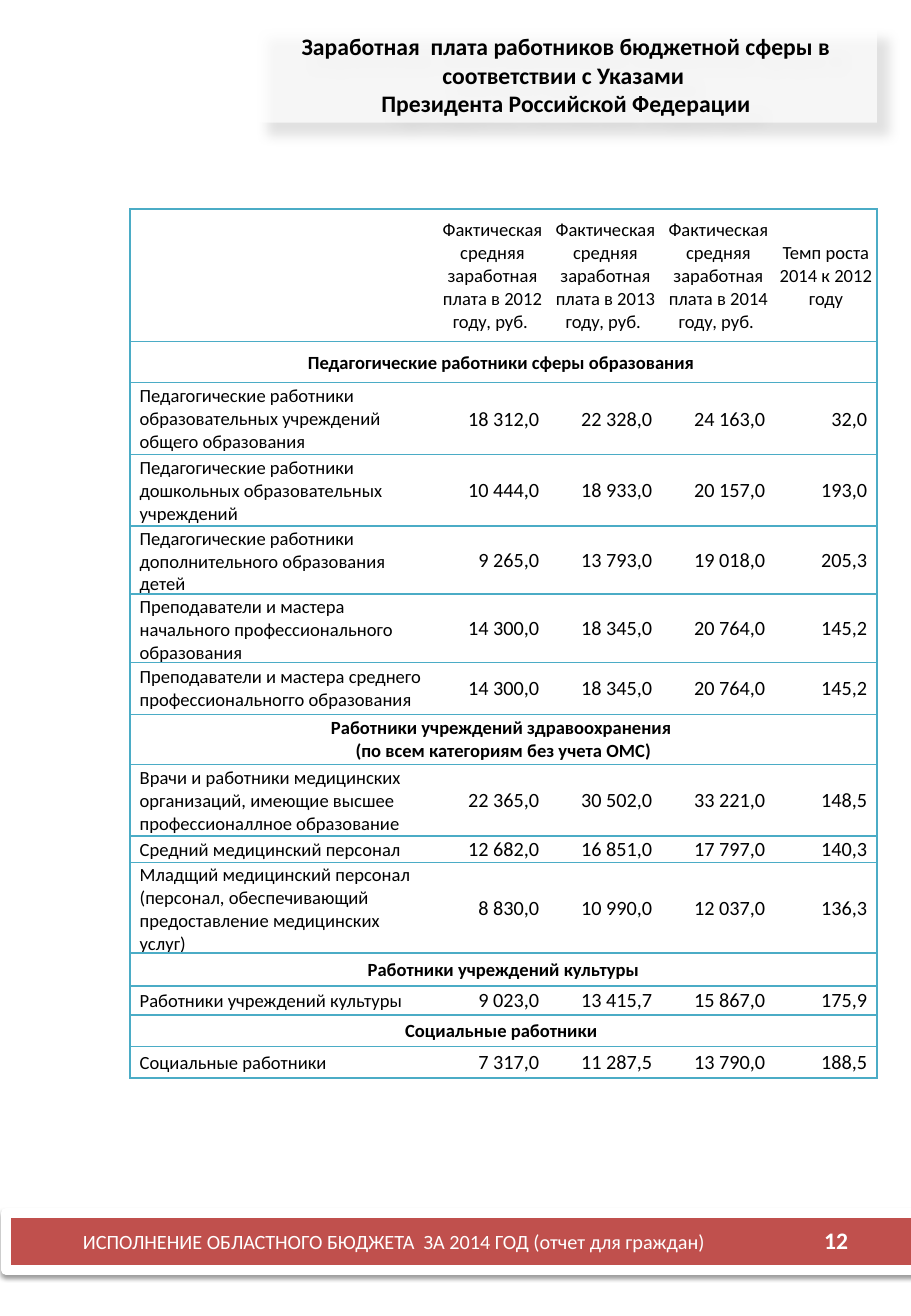
from dataclasses import dataclass

from lxml.etree import SubElement
from pptx import Presentation
from pptx.dml.color import RGBColor
from pptx.enum.shapes import MSO_SHAPE as Shape
from pptx.enum.text import MSO_ANCHOR as Anchor, PP_ALIGN as Align
from pptx.oxml import parse_xml
from pptx.oxml.ns import nsdecls, qn
from pptx.util import Inches, Pt


@dataclass(frozen=True)
class Theme:
    """Colours, font and type sizes of the slide."""
    font: str = "Calibri"
    white: str = "FFFFFF"
    black: str = "000000"
    red: str = "C0504D"
    teal: str = "4BACC6"
    large: int = 14
    medium: int = 12
    small: int = 11


THEME = Theme()
NO_STYLE = "{2D5ABB26-0587-4C30-8999-92F81FD0307C}"
COLUMN_WIDTHS = [2.52, 0.93, 0.93, 0.93, 0.84]
HEADERS = [""] + [
    f"Фактическая средняя заработная плата в {year} году, руб. " for year in (2012, 2013, 2014)
] + ["Темп роста 2014 к 2012 году"]
WAGES = [
    (0.34, "Педагогические работники сферы образования "),
    (0.59, "Педагогические работники образовательных учреждений общего образования",
     "18 312,0", "22 328,0", "24 163,0", "32,0"),
    (0.59, "Педагогические работники дошкольных образовательных учреждений",
     "10 444,0", "18 933,0", "20 157,0", "193,0"),
    (0.4, "Педагогические работники дополнительного образования детей",
     "9 265,0", "13 793,0", "19 018,0", "205,3"),
    (0.41, "Преподаватели и мастера начального профессионального образования",
     "14 300,0", "18 345,0", "20 764,0", "145,2"),
    (0.43, "Преподаватели и мастера среднего профессиональногго образования",
     "14 300,0", "18 345,0", "20 764,0", "145,2"),
    (0.41, "Работники учреждений здравоохранения \v(по всем категориям без учета ОМС)"),
    (0.59, "Врачи и работники медицинских организаций, имеющие высшее профессионаллное образование",
     "22 365,0", "30 502,0", "33 221,0", "148,5"),
    (0.22, "Средний медицинский персонал", "12 682,0", "16 851,0", "17 797,0", "140,3"),
    (0.59, "Младщий медицинский персонал (персонал, обеспечивающий предоставление медицинских услуг)",
     "8 830,0", "10 990,0", "12 037,0", "136,3"),
    (0.27, "Работники учреждений культуры"),
    (0.24, "Работники учреждений культуры", "9 023,0", "13 415,7", "15 867,0", "175,9"),
    (0.26, "Социальные работники "),
    (0.26, "Социальные работники", "7 317,0", "11 287,5", "13 790,0", "188,5"),
]


def write_text(frame, text, size, color, align, bold=False):
    """Fill a text frame with one formatted paragraph."""
    frame.text = text
    paragraph = frame.paragraphs[0]
    paragraph.alignment = align
    formats = {"name": THEME.font, "size": Pt(size), "bold": bold}
    for run in paragraph.runs:
        for name, value in formats.items():
            setattr(run.font, name, value)
        run.font.color.rgb = RGBColor.from_string(color)


def add_label(slide, box, text, size, align, bold=False):
    """Add a white, vertically centred text box."""
    frame = slide.shapes.add_textbox(*map(Inches, box)).text_frame
    frame.word_wrap = True
    frame.vertical_anchor = Anchor.MIDDLE
    write_text(frame, text, size, THEME.white, align, bold)


def add_panel(slide, box, color, opacity, blur, distance, angle):
    """Add a filled rectangle with an outer shadow."""
    panel = slide.shapes.add_shape(Shape.RECTANGLE, *map(Inches, box))
    panel.fill.solid()
    panel.fill.fore_color.rgb = RGBColor.from_string(color)
    panel.line.fill.background()
    panel.shadow.inherit = False
    effects = panel.element.spPr.find(qn("a:effectLst"))
    effects.append(parse_xml(
        f'<a:outerShdw {nsdecls("a")} blurRad="{Pt(blur)}" dist="{Pt(distance)}" '
        f'dir="{angle * 60000}" algn="t" rotWithShape="0"><a:srgbClr val="{THEME.black}">'
        f'<a:alpha val="{opacity * 1000}"/></a:srgbClr></a:outerShdw>'))
    return panel


def add_footer(slide, box):
    """Add the red footer bar with the report name and page number."""
    left, top, width, height = box
    bar = add_panel(slide, box, THEME.red, 38, 3.1, 1.6, 90)
    bar.line.color.rgb = RGBColor.from_string(THEME.white)
    bar.line.width = Pt(6)
    add_label(slide, (left + 0.24, top + 0.08, 5.91, 0.31),
              "ИСПОЛНЕНИЕ ОБЛАСТНОГО БЮДЖЕТА  ЗА 2014 ГОД (отчет для граждан)",
              THEME.medium, Align.CENTER)
    add_label(slide, (left + 6.38, top + 0.08, 0.65, 0.29), "12", THEME.large, Align.RIGHT, True)


def add_title(slide, box):
    """Add the translucent title panel."""
    panel = add_panel(slide, box, THEME.white, 16, 7, 10, 45)
    color = panel.element.spPr.find(qn("a:solidFill"))[0]
    SubElement(color, qn("a:alpha"), val="70000")
    frame = panel.text_frame
    frame.word_wrap = True
    frame.vertical_anchor = Anchor.MIDDLE
    write_text(frame, "Заработная  плата работников бюджетной сферы в соответствии с Указами \v"
               "Президента Российской Федерации", THEME.large, THEME.black, Align.CENTER, True)


def format_cell(cell, sides, inset):
    """Set borders on the given sides, a white fill and margins."""
    properties = cell._tc.get_or_add_tcPr()
    for side in ("L", "R", "T", "B"):
        paint = (f'<a:solidFill><a:srgbClr val="{THEME.teal}"/></a:solidFill>'
                 if side in sides else "<a:noFill/>")
        properties.append(parse_xml(f'<a:ln{side} {nsdecls("a")} w="{Pt(1)}">{paint}</a:ln{side}>'))
    cell.fill.solid()
    cell.fill.fore_color.rgb = RGBColor.from_string(THEME.white)
    formats = {"margin_left": Inches(inset), "margin_right": Inches(inset),
               "margin_top": Inches(0.01), "margin_bottom": 0, "vertical_anchor": Anchor.MIDDLE}
    for name, value in formats.items():
        setattr(cell, name, value)


def add_wage_table(slide, box):
    """Add the wage table with merged section rows."""
    rows = [(1.09, *HEADERS), *WAGES]
    last = len(COLUMN_WIDTHS) - 1
    table = slide.shapes.add_table(len(rows), last + 1, *map(Inches, box)).table
    table.first_row = table.horz_banding = False
    table._tbl.tblPr.find(qn("a:tableStyleId")).text = NO_STYLE
    for column, width in zip(table.columns, COLUMN_WIDTHS):
        column.width = Inches(width)
    for row_index, (height, *texts) in enumerate(rows):
        table.rows[row_index].height = Inches(height)
        header, section = row_index == 0, len(texts) == 1
        for index in range(last + 1):
            left = "L" if index == 0 else ""
            right = "R" if index == last or section else ""
            format_cell(table.cell(row_index, index), "TB" + left + right, 0.01 if header else 0.08)
        if section:
            table.cell(row_index, 0).merge(table.cell(row_index, last))
        for index, text in enumerate(texts):
            value = index > 0 and not header
            align = Align.CENTER if header or section else Align.RIGHT if value else Align.LEFT
            write_text(table.cell(row_index, index).text_frame, text,
                       THEME.medium if value else THEME.small, THEME.black, align, section)


def main():
    """Build and save the slide."""
    presentation = Presentation()
    presentation.slide_width, presentation.slide_height = Inches(7.5), Inches(10.83)
    slide = presentation.slides.add_slide(presentation.slide_layouts[6])
    slide.background.fill.solid()
    slide.background.fill.fore_color.rgb = RGBColor.from_string(THEME.white)
    add_footer(slide, (0.05, 9.98, 7.5, 0.47))
    add_title(slide, (2.1, 0.22, 5.12, 0.79))
    add_wage_table(slide, (1.07, 1.72, 6.14, 7.16))
    presentation.save("out.pptx")


if __name__ == "__main__":
    main()
